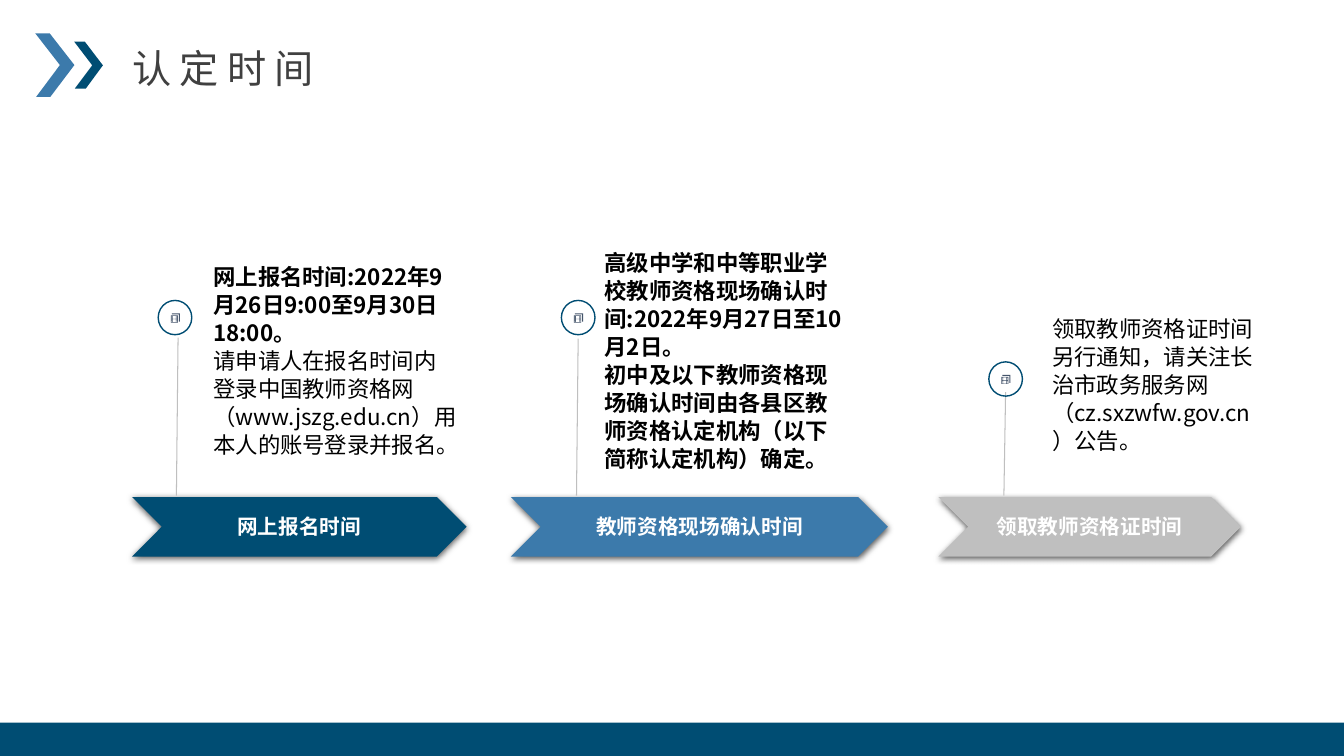
from lxml import etree
from pptx import Presentation
from pptx.dml import color as dml
from pptx.enum import shapes, text
from pptx.oxml import ns
from pptx.util import Pt

HUES = {"navy": "004D73", "blue": "3C7AAB", "grey": "BFBFBF", "slate": "44546A",
        "ink": "404040", "black": "000000", "white": "FFFFFF"}
SANS = "Noto Sans CJK SC"
KIND = shapes.MSO_SHAPE

# arrow: left, width; note: offset, top, width, height;
# pin: offset, top; stem: offset, top (offsets run from the arrow's left edge)
STEPS = [
    {"label": "网上报名时间", "hue": "navy", "arrow": (94.3, 239),
     "note": (51.1, 183.6, 188, 148.3), "pin": (18.7, 214.6), "stem": (31.7, 241.2),
     "paras": [("网上报名时间:2022年9月26日9:00至9月30日18:00。", True),
               ("请申请人在报名时间内登录中国教师资格网（www.jszg.edu.cn）"
                "用本人的账号登录并报名。", False)]},
    {"label": "教师资格现场确认时间", "hue": "blue", "arrow": (365, 269.3),
     "note": (59.8, 173.5, 188, 168.5), "pin": (36, 214.6), "stem": (46.8, 241.9),
     "paras": [("高级中学和中等职业学校教师资格现场确认时间:2022年9月27日至10月2日。", True),
               ("初中及以下教师资格现场确认时间由各县区教师资格认定机构"
                "（以下简称认定机构）确定。", True)]},
    {"label": "领取教师资格证时间", "hue": "grey", "arrow": (670.3, 216),
     "note": (74.2, 221, 162.7, 108), "pin": (36, 258.5), "stem": (46.8, 280.1),
     "paras": [("领取教师资格证时间另行通知，请关注长治市政务服务网"
                "（cz.sxzwfw.gov.cn）公告。", False)]},
]


def rgb(hue):
    return dml.RGBColor.from_string(HUES[hue])


def write(frame, paras, size=16, face=SANS, hue="black", align=text.PP_ALIGN.LEFT,
          lead=1.0, track=0, wrap=True, anchor=text.MSO_ANCHOR.TOP):
    """Fill a text frame with (words, bold) paragraphs."""
    frame.word_wrap = wrap
    frame.vertical_anchor = anchor
    for i, (words, bold) in enumerate(paras):
        para = frame.add_paragraph() if i else frame.paragraphs[0]
        para.alignment, para.line_spacing = align, lead
        run = para.add_run()
        run.text = words
        font = run.font
        font.size, font.name, font.bold = Pt(size), face, bold
        font.color.rgb = rgb(hue)
        props = run._r.get_or_add_rPr()
        if track:
            props.set("spc", str(track * 100))
        etree.SubElement(props, ns.qn("a:ea")).set("typeface", SANS)


def paint(shape, hue):
    shape.shadow.inherit = False
    shape.fill.solid()
    shape.fill.fore_color.rgb = rgb(hue)
    shape.line.fill.background()
    return shape


def block(slide, kind, x, y, w, h, hue):
    return paint(slide.shapes.add_shape(kind, Pt(x), Pt(y), Pt(w), Pt(h)), hue)


def trace(slide, loops, x, y, unit, hue):
    """Draw closed loops, given in units from (x, y), as one shape."""
    paths = [[(Pt(x + a * unit), Pt(y + b * unit)) for a, b in loop] for loop in loops]
    pen = slide.shapes.build_freeform(*paths[0][0], scale=1.0)
    for i, path in enumerate(paths):
        if i:
            pen.move_to(*path[0])
        pen.add_line_segments(path[1:], close=True)
    return paint(pen.convert_to_shape(), hue)


def rect(x, y, r, b):
    return [(x, y), (r, y), (r, b), (x, b)]


def cast(shape):
    """Add a soft shadow straight below the shape."""
    list_ = shape._element.spPr.find(ns.qn("a:effectLst"))
    shade = etree.SubElement(list_, ns.qn("a:outerShdw"), blurRad=str(Pt(4.5)),
                             dist=str(Pt(1.5)), dir="5400000", rotWithShape="0")
    tint = etree.SubElement(shade, ns.qn("a:srgbClr"), val=HUES["black"])
    etree.SubElement(tint, ns.qn("a:alpha"), val="63000")


def film(slide, x, y):
    """Draw the small film icon."""
    loops = [[(1, 0), (9, 0), (9, 8), (8, 8), (8, 1), (1, 1)], rect(0, 2, 7, 9)]
    for top in (2.4, 5.7):
        for left, right in ((0.4, 1.4), (1.8, 5), (5.4, 6.6)):
            loops.append(rect(left, top, right, top + 2.9))
        for left in (0.7, 5.8):
            loops += [rect(left, top + n, left + 0.4, top + n + 0.4)
                      for n in (0.3, 1.2, 2.1)]
    trace(slide, loops, x, y, 0.72, "slate")


def header(slide, x, y):
    trace(slide, [[(0, 0), (10.3, 0), (28, 22.7), (10.8, 45.4), (0.7, 45.4), (17.6, 22.7)]],
          x, y, 1, "blue")
    trace(slide, [[(0, 0), (7.6, 0), (20.5, 16.9), (8.3, 33.5), (0.4, 33.5), (12.9, 16.9)]],
          x + 27.8, y + 6, 1, "navy")
    title = slide.shapes.title
    title.left, title.top, title.width, title.height = map(Pt, (x + 62, y + 4.3, 150.5, 41))
    write(title.text_frame, [("认定时间", False)], size=28, hue="ink", track=6,
          wrap=False, anchor=text.MSO_ANCHOR.MIDDLE)


def stage(slide, step, y, h):
    """Place one step: its arrow at height y, with stem, pin and note above."""
    x, w = step["arrow"]
    arrow = block(slide, KIND.CHEVRON, x, y, w, h, step["hue"])
    cast(arrow)
    write(arrow.text_frame, [(step["label"], True)], size=14.7, face="Roboto", hue="white",
          align=text.PP_ALIGN.CENTER, anchor=text.MSO_ANCHOR.MIDDLE)

    dx, top = step["stem"]
    stem = slide.shapes.add_connector(shapes.MSO_CONNECTOR.STRAIGHT, Pt(x + dx), Pt(y - 1),
                                      Pt(x + dx + 1.2), Pt(top))
    stem.line.color.rgb = rgb("grey")
    stem.line.width = Pt(0.75)
    etree.SubElement(stem._element.spPr, ns.qn("a:effectLst"))

    dx, top = step["pin"]
    ring = block(slide, KIND.OVAL, x + dx, top, 24, 24.5, "white")
    ring.fill.background()
    ring.line.color.rgb = rgb("navy")
    ring.line.width = Pt(1)
    film(slide, x + dx + 9, top + 9.3)

    dx, *rest = step["note"]
    note = slide.shapes.add_textbox(*map(Pt, (x + dx, *rest))).text_frame
    write(note, step["paras"], lead=Pt(20))
    note.auto_size = text.MSO_AUTO_SIZE.SHAPE_TO_FIT_TEXT


def main():
    deck = Presentation()
    deck.slide_width, deck.slide_height = Pt(960), Pt(540)
    slide = deck.slides.add_slide(deck.slide_layouts[5])
    header(slide, 25.2, 23.8)
    for step in STEPS:
        stage(slide, step, 355, 42.5)
    block(slide, KIND.RECTANGLE, 0, 516.2, 960, 23.8, "navy")
    deck.save("out.pptx")


if __name__ == "__main__":
    main()
